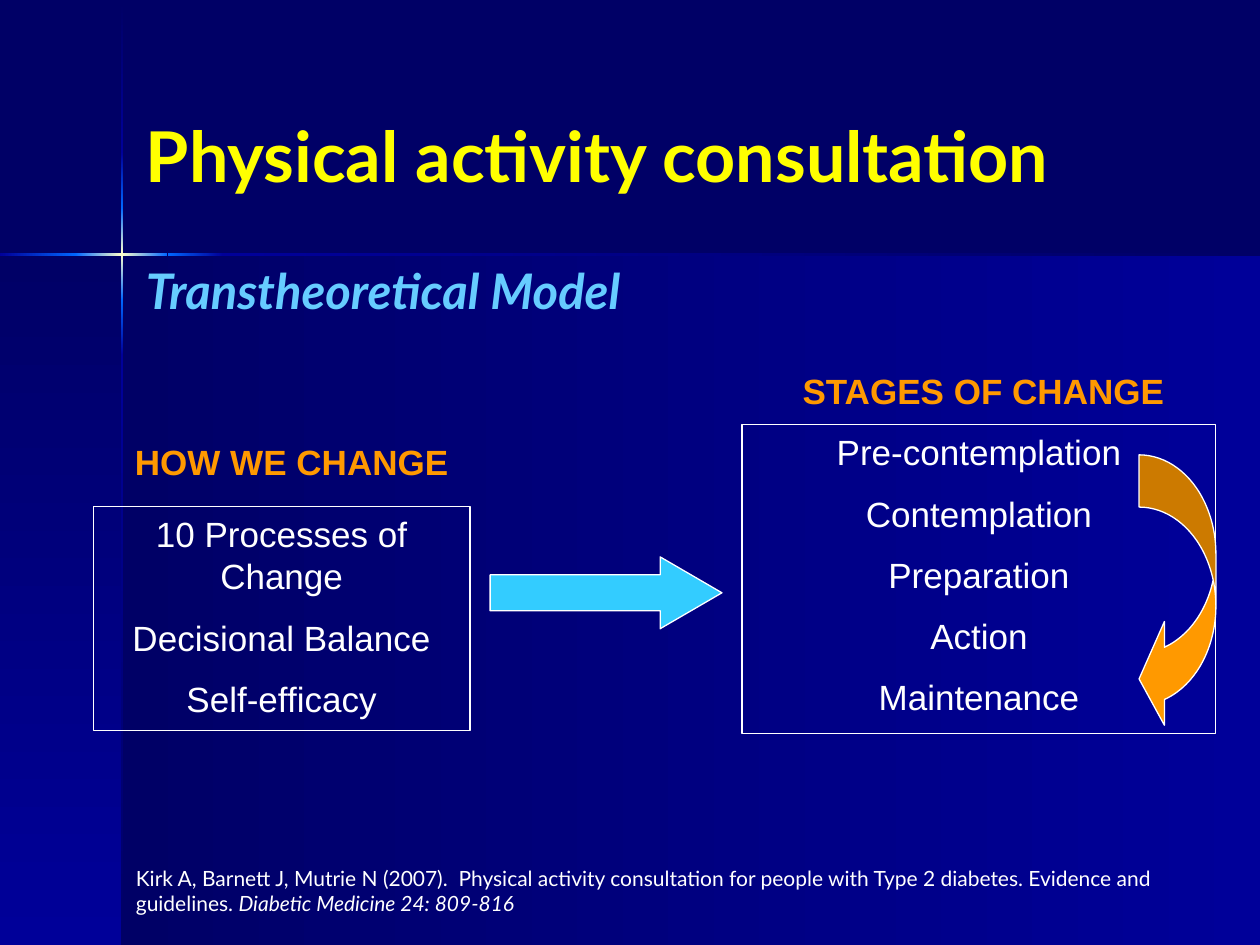
from copy import deepcopy
from dataclasses import dataclass

from pptx import Presentation
from pptx import util as u
from pptx.dml.color import RGBColor
from pptx.enum import shapes, text


@dataclass(frozen=True)
class Theme:
    navy: str = "000066"
    blue: str = "000099"
    beam: str = "0066FF"
    glow: str = "FFFFCC"
    white: str = "FFFFFF"
    yellow: str = "FFFF00"
    sky: str = "66CCFF"
    cyan: str = "33CCFF"
    orange: str = "FF9900"
    head: str = "Lato"
    body: str = "Arial"
    title: int = 40
    sub: int = 28
    label: int = 20
    note: int = 12
    gap: int = 11
    line: float = 0.75


T = Theme()
KIND = shapes.MSO_SHAPE
CROSS_X, CROSS_Y, THIN = 0.97, 2.02, 0.02


def rgb(code):
    return RGBColor.from_string(code)


def put_shape(slide, kind, box, fill=None, line=None, adj=()):
    shape = slide.shapes.add_shape(kind, *map(u.Inches, box))
    shape.shadow.inherit = False
    for i, value in enumerate(adj):
        shape.adjustments[i] = value
    if fill:
        shape.fill.solid()
        shape.fill.fore_color.rgb = rgb(fill)
    else:
        shape.fill.background()
    if line:
        shape.line.color.rgb = rgb(line)
        shape.line.width = u.Pt(T.line)
    else:
        shape.line.fill.background()
    return shape


def put_fade(slide, box, tones, down=False):
    """Add a bar that fades evenly through the tones, rightward or down."""
    bar = put_shape(slide, KIND.RECTANGLE, box)
    bar.fill.gradient()
    bar.fill.gradient_angle = 270 if down else 0
    stops = bar.element.spPr.xpath(".//a:gsLst")[0]
    for _ in tones[2:]:
        stops.append(deepcopy(stops[0]))
    for i, (stop, tone) in enumerate(zip(bar.fill.gradient_stops, tones)):
        stop.color.rgb = rgb(tone)
        stop.position = i / (len(tones) - 1)


def put_cross(slide):
    """Add the two panels and the lit cross where they meet."""
    rise, fall = (T.navy, T.blue), (T.blue, T.navy)
    put_fade(slide, (CROSS_X, CROSS_Y, 10 - CROSS_X, 7.5 - CROSS_Y), rise)
    put_fade(slide, (0, CROSS_Y, CROSS_X, 7.5 - CROSS_Y), rise, down=True)

    lit, dim = (T.blue, T.beam), (T.beam, T.blue)
    core = (T.beam, T.glow, T.beam)
    column = [(0.01, 1.21, rise), (2.82, 7.5, fall), (2.38, 2.82, dim),
              (1.21, 1.65, lit), (1.65, 2.38, core)]
    row = [(1.77, 10, fall), (0, 0.61, lit), (1.33, 1.77, dim),
           (0.6, 1.33, core)]
    for top, end, tones in column:
        box = (CROSS_X - THIN / 2, top, THIN, end - top)
        put_fade(slide, box, tones, down=True)
    for left, end, tones in row:
        put_fade(slide, (left, CROSS_Y - THIN / 2, end - left, THIN), tones)


def write(frame, *lines, size=T.label, font=T.body, color=T.white, bold=False,
          italic=False, center=False, gap=0, middle=False):
    """Fill a frame; a line is a string or a list of (string, italic) runs."""
    anchor = text.MSO_ANCHOR
    frame.word_wrap = True
    frame.vertical_anchor = anchor.MIDDLE if middle else anchor.TOP
    for i, line in enumerate(lines):
        para = frame.add_paragraph() if i else frame.paragraphs[0]
        para.alignment = text.PP_ALIGN.CENTER if center else text.PP_ALIGN.LEFT
        para.space_before = u.Pt(gap)
        runs = [(line, italic)] if isinstance(line, str) else line
        for words, slant in runs:
            run = para.add_run()
            run.text = words
            run.font.name = font
            run.font.size = u.Pt(size)
            run.font.bold = bold
            run.font.italic = slant
            run.font.color.rgb = rgb(color)


def put_text(slide, box, *lines, **style):
    area = slide.shapes.add_textbox(*map(u.Inches, box))
    write(area.text_frame, *lines, **style)


def put_list(slide, box, *lines):
    frame = put_shape(slide, KIND.RECTANGLE, box, line=T.white).text_frame
    write(frame, *lines, center=True, gap=T.gap)


def main():
    deck = Presentation()
    deck.slide_width, deck.slide_height = u.Inches(10), u.Inches(7.5)
    slide = deck.slides.add_slide(deck.slide_layouts[6])
    slide.background.fill.solid()
    slide.background.fill.fore_color.rgb = rgb(T.navy)
    put_cross(slide)

    put_text(slide, (1.06, 0.84, 8.43, 0.77), "Physical activity consultation",
             size=T.title, font=T.head, color=T.yellow, bold=True, middle=True)
    put_text(slide, (1.06, 2.02, 8.94, 5.2), "Transtheoretical Model",
             size=T.sub, font=T.head, color=T.sky, bold=True, italic=True)

    put_list(slide, (5.89, 3.37, 3.76, 2.45), "Pre-contemplation",
             "Contemplation", "Preparation", "Action", "Maintenance")
    put_list(slide, (0.74, 4.02, 2.99, 1.78), "10 Processes of Change",
             "Decisional Balance", "Self-efficacy")
    put_shape(slide, KIND.RIGHT_ARROW, (3.89, 4.42, 1.84, 0.57),
              T.cyan, T.white, (0.5, 0.86))
    put_shape(slide, KIND.CURVED_LEFT_ARROW, (9.04, 3.61, 0.61, 2.19),
              T.orange, T.white, (0.68, 1.35, 0.33))

    caption = dict(color=T.orange, bold=True, center=True)
    put_text(slide, (5.81, 2.88, 3.99, 0.43), "STAGES OF CHANGE", **caption)
    put_text(slide, (0.59, 3.45, 3.45, 0.43), "HOW WE CHANGE", **caption)

    source = [("Kirk A, Barnett J, Mutrie N (2007).  Physical activity "
               "consultation for people with Type 2 diabetes. Evidence and "
               "guidelines. ", False),
              ("Diabetic Medicine 24: 809-816", True)]
    put_text(slide, (0.98, 6.82, 8.72, 0.5), source, size=T.note, font=T.head)

    deck.save("out.pptx")


if __name__ == "__main__":
    main()
